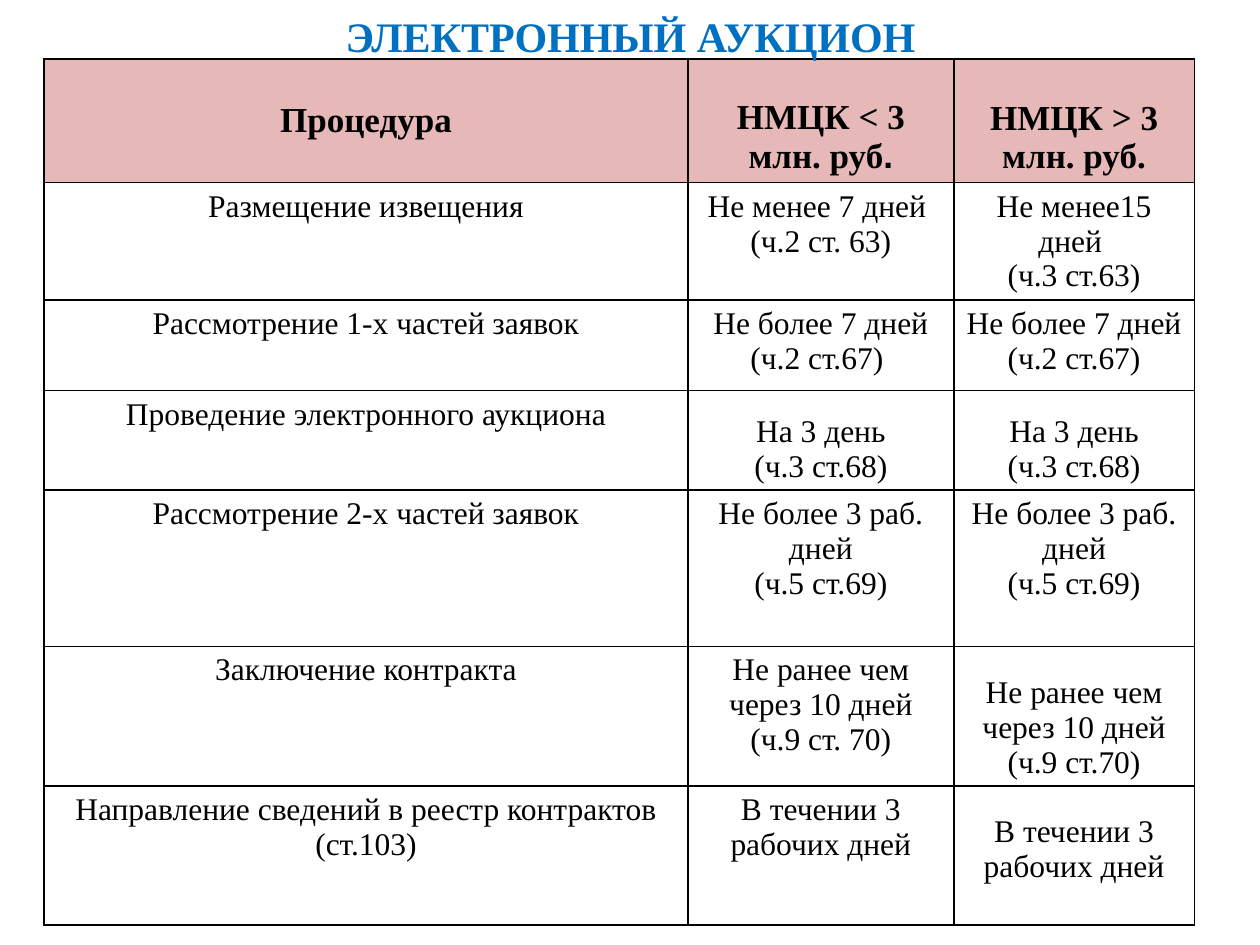
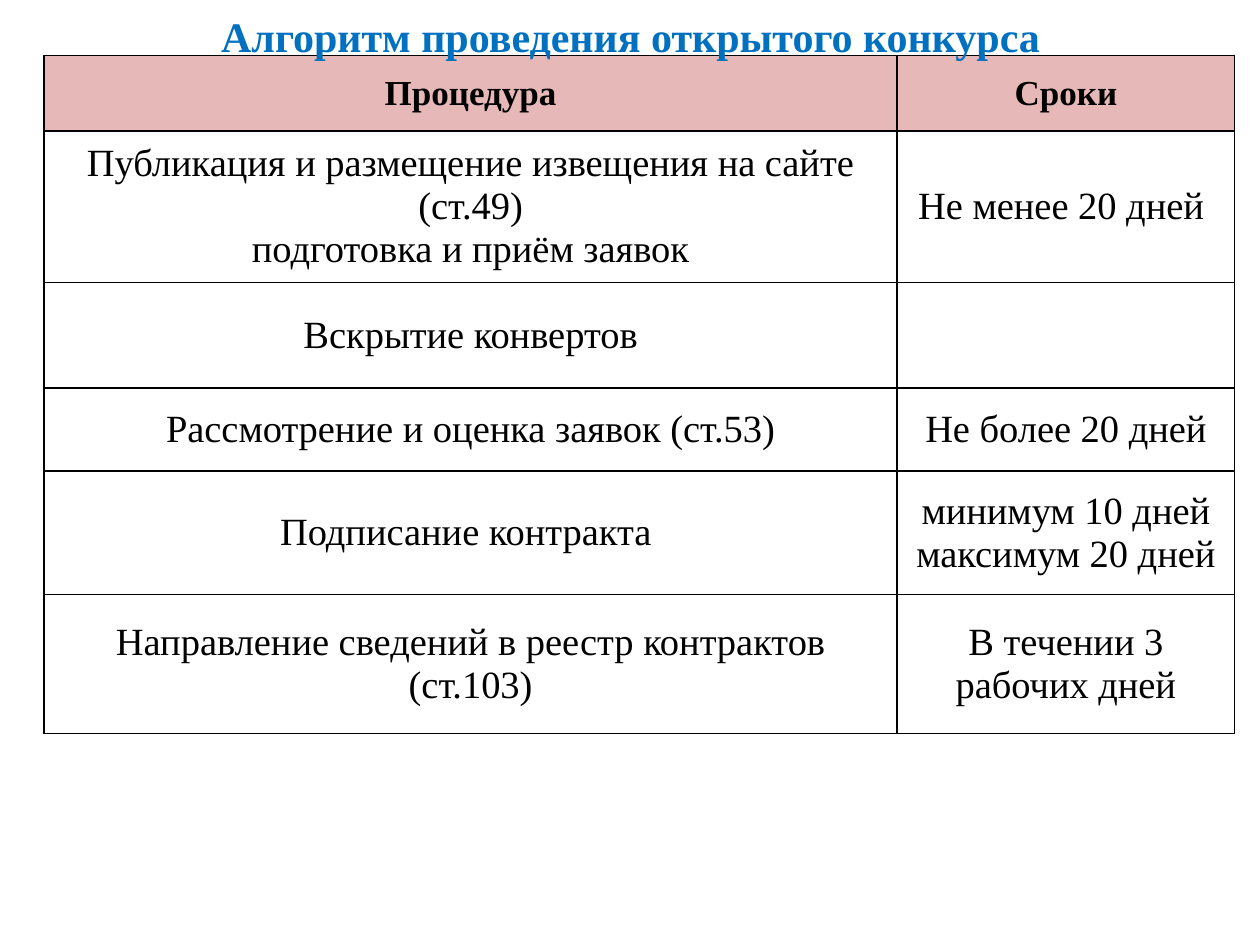
from lxml import etree
from pptx import Presentation
from pptx.dml.color import RGBColor
from pptx.enum.text import MSO_ANCHOR as Anchor, MSO_AUTO_SIZE as Fit, PP_ALIGN as Align
from pptx.oxml.ns import qn
from pptx.util import Inches, Pt

FACE = "Times New Roman"
BLUE, PINK, BLACK = "0070C0", "E6B9B8", "000000"
LEFT = 0.35
ANCHORS = {"t": Anchor.TOP, "m": Anchor.MIDDLE, "b": Anchor.BOTTOM}
REPORT = "Направление сведений в реестр контрактов (ст.103)"
SOON = "В течении 3 рабочих дней"

# Each row: height, anchors of its cells, texts of its cells
AUCTION = {
    "title": "ЭЛЕКТРОННЫЙ АУКЦИОН",
    "top": 0.47, "size": 18, "cols": [5.11, 2.11, 1.91],
    "rows": [
        (0.98, "mbb", ["Процедура", "НМЦК < 3 млн. руб", "НМЦК > 3 млн. руб."]),
        (0.93, "ttb", ["Размещение извещения", "Не менее 7 дней \n(ч.2 ст. 63)",
                       "Не менее15 дней \n(ч.3 ст.63)"]),
        (0.72, "ttt", ["Рассмотрение 1-х частей заявок",
                       "Не более 7 дней\n(ч.2 ст.67) ", "Не более 7 дней\n(ч.2 ст.67)"]),
        (0.79, "tbb", ["Проведение электронного аукциона",
                       "На 3 день\n(ч.3 ст.68)", "На 3 день\n(ч.3 ст.68)"]),
        (1.24, "ttt", ["Рассмотрение 2-х частей заявок",
                       "Не более 3 раб. дней\n(ч.5 ст.69)",
                       "Не более 3 раб. дней\n(ч.5 ст.69)"]),
        (1.11, "ttb", ["Заключение контракта",
                       "Не ранее чем через 10 дней\n(ч.9 ст. 70)",
                       "Не ранее чем через 10 дней\n(ч.9 ст.70)"]),
        (1.1, "ttb", [REPORT, SOON, SOON]),
    ],
}
CONTEST = {
    "title": "Алгоритм проведения открытого конкурса",
    "top": 0.44, "size": 22, "cols": [6.77, 2.68],
    "rows": [
        (0.6, "mm", ["Процедура", "Сроки"]),
        (1.2, "mm", ["Публикация и размещение извещения на сайте (ст.49)\n"
                     "подготовка и приём заявок", "Не менее 20 дней "]),
        (0.84, "mm", ["Вскрытие конвертов", ""]),
        (0.66, "mm", ["Рассмотрение и оценка заявок (ст.53)", "Не более 20 дней"]),
        (0.98, "mm", ["Подписание контракта ", "минимум 10 дней\nмаксимум 20 дней"]),
        (1.1, "mm", [REPORT, SOON]),
    ],
}


def color(text):
    return RGBColor.from_string(text)


def style(frame, size, hue, bold):
    for para in frame.paragraphs:
        para.alignment = Align.CENTER
        font = para.font
        font.name, font.size, font.bold = FACE, Pt(size), bold
        font.color.rgb = color(hue)


def border(cell):
    """Draw a 1 pt line on all four sides; call before the fill is set."""
    props = cell._tc.get_or_add_tcPr()
    for side in ("a:lnL", "a:lnR", "a:lnT", "a:lnB"):
        line = etree.SubElement(props, qn(side), w=str(Pt(1)))
        fill = etree.SubElement(line, qn("a:solidFill"))
        etree.SubElement(fill, qn("a:srgbClr"), val=BLACK)


def add_title(slide, text):
    title = slide.shapes.title
    title.left, title.top = Inches(0.2), 0
    title.width, title.height = Inches(9.61), Inches(0.51)
    frame = title.text_frame
    frame.text = text
    frame.auto_size = Fit.NONE
    frame.vertical_anchor = Anchor.TOP
    frame.margin_top = Inches(0.08)
    style(frame, 24, BLUE, True)
    return title


def add_grid(slide, top, size, cols, rows):
    frame = slide.shapes.add_table(
        len(rows), len(cols), Inches(LEFT), Inches(top),
        Inches(sum(cols)), Inches(sum(row[0] for row in rows)))
    table = frame.table
    table.first_row = table.horz_banding = False
    for col, width in zip(table.columns, cols):
        col.width = Inches(width)
    for r, (height, anchors, texts) in enumerate(rows):
        table.rows[r].height = Inches(height)
        head = r == 0
        for c, (anchor, text) in enumerate(zip(anchors, texts)):
            cell = table.cell(r, c)
            cell.text = text
            cell.vertical_anchor = ANCHORS[anchor]
            style(cell.text_frame, 20 if head else size, BLACK, head)
            border(cell)
            if head:
                cell.fill.solid()
                cell.fill.fore_color.rgb = color(PINK)
            else:
                cell.fill.background()
    return frame


def add_page(deck, title, **grid):
    slide = deck.slides.add_slide(deck.slide_layouts[5])
    head = add_title(slide, title)
    frame = add_grid(slide, **grid)
    frame.element.addnext(head.element)  # title lies over the table's edge
    return frame.table


def main():
    deck = Presentation()
    deck.slide_width, deck.slide_height = Inches(10), Inches(7.5)
    table = add_page(deck, **AUCTION)
    dot = table.cell(0, 1).text_frame.paragraphs[0].add_run()
    dot.text, dot.font.name = ".", "Arial"
    table.cell(6, 2).margin_bottom = Inches(0.32)
    add_page(deck, **CONTEST)
    deck.save("out.pptx")


if __name__ == "__main__":
    main()
